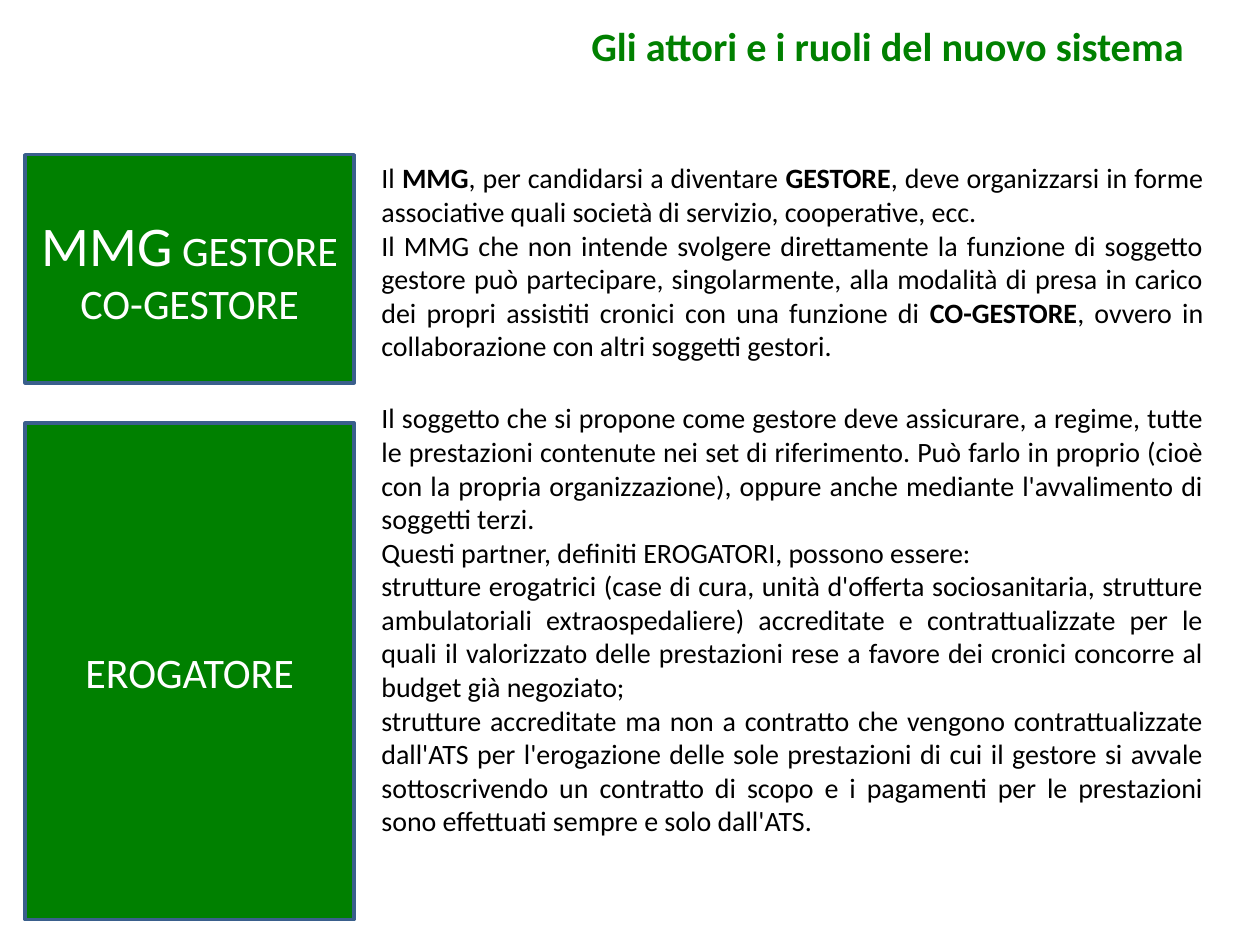
"""Build the slide on the actors and roles of the new care system."""
import pptx
import pptx.dml.color
import pptx.enum.shapes
import pptx.enum.text
import pptx.util

Cm = pptx.util.Cm
Pt = pptx.util.Pt
RGBColor = pptx.dml.color.RGBColor
Align = pptx.enum.text.PP_ALIGN
Anchor = pptx.enum.text.MSO_ANCHOR

GREEN = RGBColor(0x00, 0x80, 0x00)
BLUE = RGBColor(0x3A, 0x5F, 0x8C)
BLACK = RGBColor(0x00, 0x00, 0x00)
WHITE = RGBColor(0xFF, 0xFF, 0xFF)

FONT = "Calibri"
LEFT, WIDTH = 0.51, 6.63
TOP = 3.12
INDENT = 0.3

MANAGER = [
    ["Il ", ("MMG", True), ", per candidarsi a diventare ", ("GESTORE", True),
     ", deve organizzarsi in forme associative quali società di servizio, "
     "cooperative, ecc."],
    ["Il MMG che non intende svolgere direttamente la funzione di soggetto "
     "gestore può partecipare, singolarmente, alla modalità di presa in carico "
     "dei propri assistiti cronici con una funzione di ", ("CO-GESTORE", True),
     ", ovvero in collaborazione con altri soggetti gestori."],
]
SUPPLIER = [
    ["Il soggetto che si propone come gestore deve assicurare, a regime, tutte "
     "le prestazioni contenute nei set di riferimento. Può farlo in proprio "
     "(cioè con la propria organizzazione), oppure anche mediante "
     "l'avvalimento di soggetti terzi."],
    ["Questi partner, definiti EROGATORI, possono essere:"],
    ["strutture erogatrici (case di cura, unità d'offerta sociosanitaria, "
     "strutture ambulatoriali extraospedaliere) accreditate e "
     "contrattualizzate per le quali il valorizzato delle prestazioni rese a "
     "favore dei cronici concorre al budget già negoziato;"],
    ["strutture accreditate ma non a contratto che vengono contrattualizzate "
     "dall'ATS per l'erogazione delle sole prestazioni di cui il gestore si "
     "avvale sottoscrivendo un contratto di scopo e i pagamenti per le "
     "prestazioni sono effettuati sempre e solo dall'ATS."],
]


def write(para, text, size=16, color=BLACK, bold=False):
    """Add a run of text to a paragraph."""
    run = para.add_run()
    run.text = text
    run.font.name = FONT
    run.font.size = Pt(size)
    run.font.bold = bold
    run.font.color.rgb = color


def add_para(frame, align):
    """Return the next free paragraph of a frame."""
    first = frame.paragraphs[0]
    para = frame.add_paragraph() if first.runs else first
    para.alignment = align
    return para


def add_text(slide, left, top, width, height):
    """Add a wrapping text box and return its frame."""
    box = slide.shapes.add_textbox(Cm(left), Cm(top), Cm(width), Cm(height))
    box.text_frame.word_wrap = True
    return box.text_frame


def add_role(slide, top, height, lines):
    """Add a green role box with centred lines of sized runs."""
    rect = pptx.enum.shapes.MSO_SHAPE.RECTANGLE
    box = slide.shapes.add_shape(rect, Cm(LEFT), Cm(top), Cm(WIDTH), Cm(height))
    box.shadow.inherit = False
    box.fill.solid()
    box.fill.fore_color.rgb = GREEN
    box.line.color.rgb = BLUE
    box.line.width = Pt(2)
    frame = box.text_frame
    frame.word_wrap = True
    frame.vertical_anchor = Anchor.MIDDLE
    for line in lines:
        para = add_para(frame, Align.CENTER)
        for text, size in line:
            write(para, text, size=size, color=WHITE)


def add_body(frame, paras, gap=0):
    """Add justified paragraphs, with a gap before the first."""
    for row, parts in enumerate(paras):
        para = add_para(frame, Align.JUSTIFY)
        props = para._p.get_or_add_pPr()
        props.set("marL", str(Cm(INDENT)))
        props.set("indent", "0")
        para.space_before = Pt(0 if row else gap)
        for part in parts:
            text, bold = (part, False) if isinstance(part, str) else part
            write(para, text, bold=bold)


def main():
    """Build and save the slide."""
    deck = pptx.Presentation()
    deck.slide_width, deck.slide_height = Cm(25.4), Cm(19.05)
    slide = deck.slides.add_slide(deck.slide_layouts[6])

    title = add_text(slide, 11.3, 0.3, 13.21, 1.22)
    write(add_para(title, Align.CENTER), "Gli attori e i ruoli del nuovo sistema",
          size=23, color=GREEN, bold=True)

    body = add_text(slide, LEFT + WIDTH, TOP, 17.37, 15.85)
    add_body(body, MANAGER)
    add_body(body, SUPPLIER, gap=22)

    add_role(slide, TOP, 4.6, [[("MMG", 32), (" GESTORE", 24)], [("CO-GESTORE", 24)]])
    add_role(slide, 8.53, 10.01, [[("EROGATORE", 24)]])
    deck.save("out.pptx")


if __name__ == "__main__":
    main()
